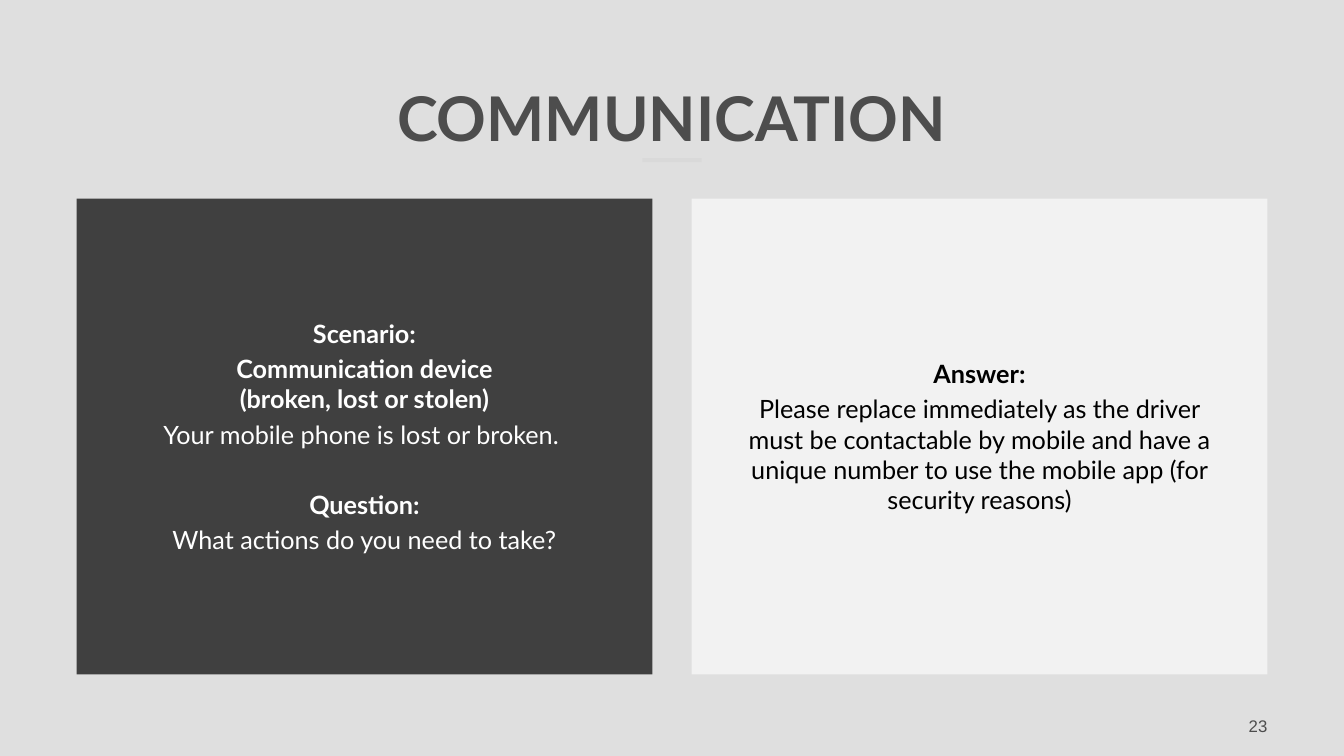
from pptx import Presentation, util as u
from pptx.dml.color import RGBColor
from pptx.enum import shapes, text

TITLE = "COMMUNICATION"
PAGE = "23"
CARDS = [
    ("dark", "white", [
        ("Scenario:", True, "near"),
        ("Communication device\n(broken, lost or stolen)", True, "near"),
        ("Your mobile phone is lost or broken. ", False, "near"),
        ("Question:", True, "far"),
        ("What actions do you need to take?", False, "near"),
    ]),
    ("pale", "black", [
        ("Answer:", True, "near"),
        ("Please replace immediately as the driver must be contactable by mobile "
         "and have a unique number to use the mobile app (for security reasons)",
         False, "near"),
    ]),
]
THEME = {
    "back": "DFDFDF", "rule": "D9D9D9", "ink": "4D4D4D", "dark": "404040",
    "pale": "F2F2F2", "white": "FFFFFF", "black": "000000",
    "head": 44, "body": 18, "foot": 12, "lead": 48.8,
    "near": 3.6, "far": 28.8, "main": "Lato", "plain": "Arial",
}
WIDE, HIGH = 13.33, 7.5
EDGE, GAP, PAD = 0.76, 0.39, 0.39
SPAN = WIDE - 2 * EDGE
CARD = (SPAN - GAP) / 2
TOP, TALL = 1.97, 4.72
RULE = 0.59


def tint(name):
    return RGBColor.from_string(THEME[name])


def put(item, **vals):
    for key, val in vals.items():
        setattr(item, key, val)


def block(slide, box, fill):
    shape = slide.shapes.add_shape(
        shapes.MSO_SHAPE.RECTANGLE, *map(u.Inches, box))
    shape.shadow.inherit = False
    shape.fill.solid()
    shape.fill.fore_color.rgb = tint(fill)
    shape.line.fill.background()
    return shape


def label(slide, box):
    return slide.shapes.add_textbox(*map(u.Inches, box))


def write(shape, rows, ink, size, face, side, seat, pads, lead=None):
    frame = shape.text_frame
    put(frame, word_wrap=True, vertical_anchor=seat)
    put(frame, **dict(zip(
        ("margin_left", "margin_top", "margin_right", "margin_bottom"),
        map(u.Inches, pads))))
    for num, (words, bold, space) in enumerate(rows):
        para = frame.add_paragraph() if num else frame.paragraphs[0]
        put(para, text=words, alignment=side, line_spacing=lead,
            space_before=u.Pt(THEME[space]) if space else None)
        for run in para.runs:
            put(run.font, name=THEME[face], size=u.Pt(THEME[size]), bold=bold)
            run.font.color.rgb = tint(ink)


def main():
    deck = Presentation()
    put(deck, slide_width=u.Inches(WIDE), slide_height=u.Inches(HIGH))
    slide = deck.slides.add_slide(deck.slide_layouts[6])
    slide.background.fill.solid()
    slide.background.fill.fore_color.rgb = tint("back")

    side, seat = text.PP_ALIGN, text.MSO_ANCHOR
    block(slide, ((WIDE - RULE) / 2, 1.57, RULE, 0.04), "rule")
    write(label(slide, (EDGE, 0.39, SPAN, 1.18)), [(TITLE, True, None)],
          "ink", "head", "main", side.CENTER, seat.BOTTOM,
          (0.1, 0.05, 0.1, 0.05), u.Pt(THEME["lead"]))
    write(label(slide, (WIDE - EDGE - 1.18, 7.01, 1.18, 0.39)),
          [(PAGE, False, None)], "ink", "foot", "plain", side.RIGHT,
          seat.MIDDLE, (0.1, 0.05, 0, 0.05))
    for col, (fill, ink, rows) in enumerate(CARDS):
        left = EDGE + col * (CARD + GAP)
        card = block(slide, (left, TOP, CARD, TALL), fill)
        write(card, rows, ink, "body", "main", side.CENTER, seat.MIDDLE,
              (PAD,) * 4)
    deck.save("out.pptx")


if __name__ == "__main__":
    main()
